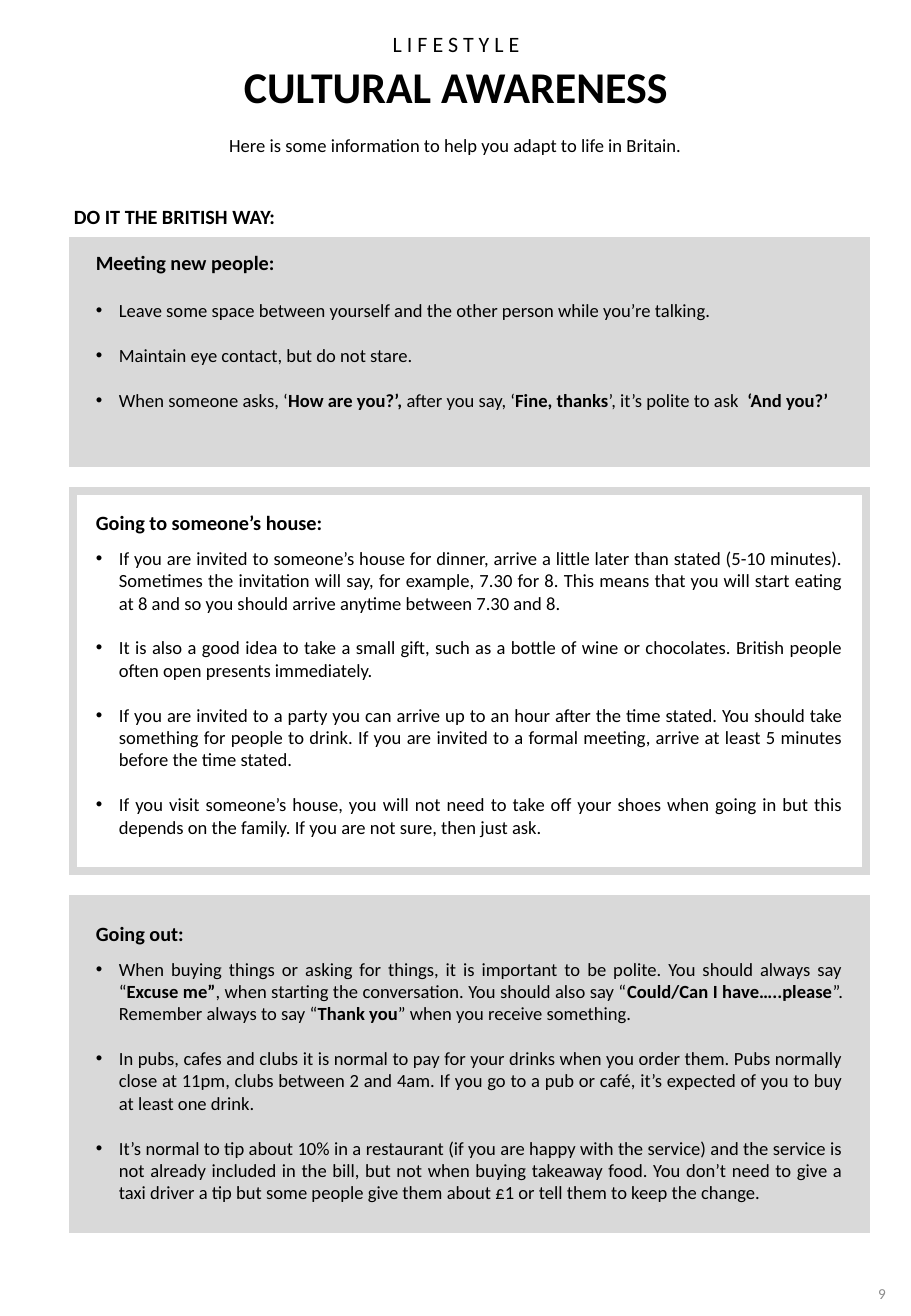
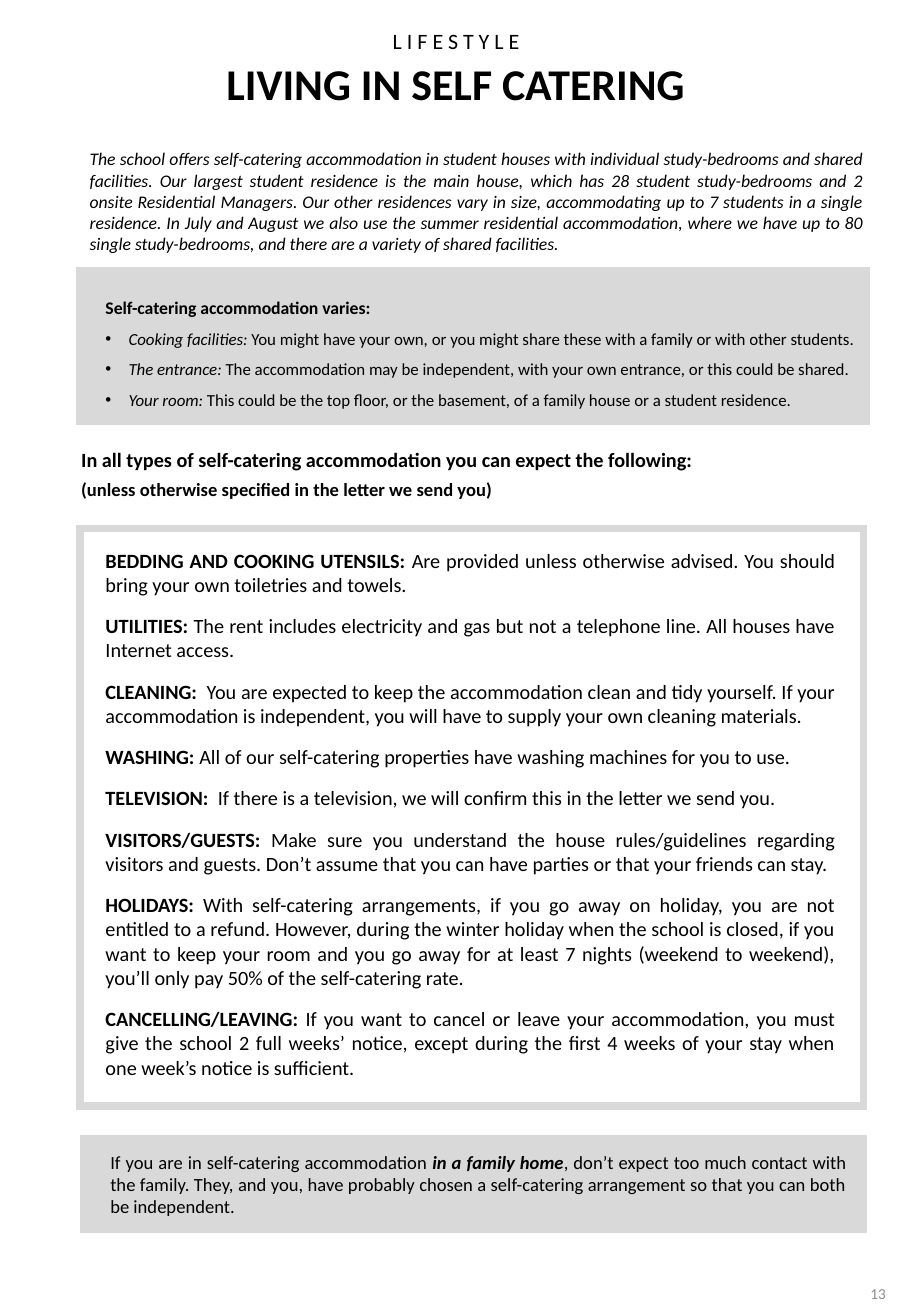
import pptx
import pptx.util
import pptx.dml.color
import pptx.enum.shapes
import pptx.enum.text
import pptx.oxml.ns
import lxml.etree

Inches, Pt = pptx.util.Inches, pptx.util.Pt
qn = pptx.oxml.ns.qn
ALIGN = pptx.enum.text.PP_ALIGN

# Shared style
BLACK = pptx.dml.color.RGBColor(0x00, 0x00, 0x00)
PANEL = pptx.dml.color.RGBColor(0xD9, 0xD9, 0xD9)
PAGE_GREY = pptx.dml.color.RGBColor(0x8C, 0x8C, 0x8C)
FONT = "Calibri"
BULLET_INDENT = Inches(0.19)
BULLET_GAP = 13.4  # one line of 11 pt text

# Each paragraph is a list of (text, style) runs; style holds "b" and/or "i"
MEETING = [
    [("Leave some space between yourself and the other person while you’re talking.", "")],
    [("Maintain eye contact, but do not stare.", "")],
    [("When someone asks, ‘", ""), ("How are you?’, ", "b"), ("after you say, ‘", ""),
     ("Fine, thanks", "b"), ("’, it’s polite to ask  ", ""), ("‘And you?’", "b")],
]
VISITING = [
    [("If you are invited to someone’s house for dinner, arrive a little later than stated "
      "(5-10 minutes). Sometimes the invitation will say, for example, 7.30 for 8. This means "
      "that you will start eating at 8 and so you should arrive anytime between 7.30 and 8.", "")],
    [("It is also a good idea to take a small gift, such as a bottle of wine or chocolates. "
      "British people often open presents immediately.", "")],
    [("If you are invited to a party you can arrive up to an hour after the time stated. You "
      "should take something for people to drink. If you are invited to a formal meeting, "
      "arrive at least 5 minutes before the time stated.", "")],
    [("If you visit someone’s house, you will not need to take off your shoes when going in "
      "but this depends on the family. If you are not sure, then just ask.", "")],
]
GOING_OUT = [
    [("When buying things or asking for things, it is important to be polite. You should "
      "always say “", ""), ("Excuse me”", "b"),
     (", when starting the conversation. You should also say “", ""),
     ("Could/Can I have…..please", "b"), ("”. Remember always to say “", ""),
     ("Thank you", "b"), ("” when you receive something.", "")],
    [("In pubs, cafes and clubs it is normal to pay for your drinks when you order them. Pubs "
      "normally close at 11pm, clubs between 2 and 4am. If you go to a pub or café, it’s "
      "expected of you to buy at least one drink.", "")],
    [("It’s normal to tip about 10% in a restaurant (if you are happy with the service) and "
      "the service is not already included in the bill, but not when buying takeaway food. "
      "You don’t need to give a taxi driver a tip but some people give them about £1 or tell "
      "them to keep the change.", "")],
]
INTRO = (
    "The school offers self-catering accommodation in student houses with individual "
    "study-bedrooms and shared facilities. Our largest student residence is the main house, "
    "which has 28 student study-bedrooms and 2 onsite Residential Managers. Our other "
    "residences vary in size, accommodating up to 7 students in a single residence. In July "
    "and August we also use the summer residential accommodation, where we have up to 80 "
    "single study-bedrooms, and there are a variety of shared facilities.")
VARIATIONS = [
    ("Cooking facilities:",
     " You might have your own, or you might share these with a family or with other students."),
    ("The entrance:",
     " The accommodation may be independent, with your own entrance, or this could be shared."),
    ("Your room:",
     " This could be the top floor, or the basement, of a family house or a student residence."),
]
PROVISIONS = [
    ("BEDDING AND COOKING UTENSILS:",
     " Are provided unless otherwise advised. You should bring your own toiletries and towels."),
    ("UTILITIES:",
     " The rent includes electricity and gas but not a telephone line. All houses have "
     "Internet access."),
    ("CLEANING:",
     "  You are expected to keep the accommodation clean and tidy yourself. If your "
     "accommodation is independent, you will have to supply your own cleaning materials."),
    ("WASHING:",
     " All of our self-catering properties have washing machines for you to use."),
    ("TELEVISION:",
     "  If there is a television, we will confirm this in the letter we send you."),
    ("VISITORS/GUESTS:",
     " Make sure you understand the house rules/guidelines regarding visitors and guests. "
     "Don’t assume that you can have parties or that your friends can stay."),
    ("HOLIDAYS:",
     " With self-catering arrangements, if you go away on holiday, you are not entitled to a "
     "refund. However, during the winter holiday when the school is closed, if you want to "
     "keep your room and you go away for at least 7 nights (weekend to weekend), you’ll only "
     "pay 50% of the self-catering rate."),
    ("CANCELLING/LEAVING:",
     " If you want to cancel or leave your accommodation, you must give the school 2 full "
     "weeks’ notice, except during the first 4 weeks of your stay when one week’s notice is "
     "sufficient."),
]
FAMILY_HOME = [
    ("If you are in self-catering accommodation ", ""), ("in a family home", "bi"),
    (", don’t expect too much contact with the family. They, and you, have probably chosen a "
     "self-catering arrangement so that you can both be independent.", "")]


def add_box(s, left, top, width, height):
    """Add an empty wrapping text box and return its text frame."""
    tf = s.shapes.add_textbox(Inches(left), Inches(top), Inches(width), Inches(height)).text_frame
    tf.word_wrap = True
    return tf


def add_para(tf, runs, size, align=ALIGN.JUSTIFY, after=0, line=1.0, bullet=False,
             color=BLACK, spacing=0):
    """Write one paragraph, using the frame's first one while it is still empty."""
    p = tf.paragraphs[0]
    if p.runs:
        p = tf.add_paragraph()
    p.alignment, p.space_after, p.line_spacing = align, Pt(after), line
    if bullet:
        pPr = p._p.get_or_add_pPr()
        pPr.set("marL", str(BULLET_INDENT))
        pPr.set("indent", str(-BULLET_INDENT))
        lxml.etree.SubElement(pPr, qn("a:buFont")).set("typeface", "Arial")
        lxml.etree.SubElement(pPr, qn("a:buChar")).set("char", "•")
    for text, style in runs:
        r = p.add_run()
        r.text = text
        r.font.name, r.font.size = FONT, Pt(size)
        r.font.bold, r.font.italic = "b" in style, "i" in style
        r.font.color.rgb = color
        if spacing:
            r._r.get_or_add_rPr().set("spc", str(spacing * 100))


def add_line(s, left, top, width, height, text, size, style="", **options):
    """Add a text box that holds a single run."""
    add_para(add_box(s, left, top, width, height), [(text, style)], size, **options)


def add_panel(s, left, top, width, height, filled=True):
    """Add a grey rectangle, or only its grey frame."""
    sp = s.shapes.add_shape(pptx.enum.shapes.MSO_SHAPE.RECTANGLE,
                            Inches(left), Inches(top), Inches(width), Inches(height))
    sp.shadow.inherit = False
    if filled:
        sp.fill.solid()
        sp.fill.fore_color.rgb = PANEL
    else:
        sp.fill.background()
    sp.line.color.rgb = PANEL
    sp.line.width = Pt(4.5)
    ln = sp._element.spPr.find(qn("a:ln"))
    lxml.etree.SubElement(ln, qn("a:miter")).set("lim", "800000")


def add_page(prs, title, number, top):
    """Add a slide with the section name, title and page number."""
    s = prs.slides.add_slide(prs.slide_layouts[6])
    add_line(s, 0.29, top, 6.93, 0.32, "LIFESTYLE", 13, align=ALIGN.CENTER, spacing=3)
    add_line(s, 0.29, top + 0.24, 6.93, 0.54, title, 26, "b", align=ALIGN.CENTER)
    tf = add_box(s, 5.7, 10.35, 1.69, 0.58)
    tf.vertical_anchor = pptx.enum.text.MSO_ANCHOR.MIDDLE
    add_para(tf, [(number, "")], 9, align=ALIGN.RIGHT, color=PAGE_GREY)
    return s


def add_advice(s, top, height, text_top, heading, heading_gap, points, filled=True):
    """Add a panel with a heading and spaced bullet points."""
    add_panel(s, 0.6, top, 6.53, height, filled)
    tf = add_box(s, 0.69, text_top, 6.35, height - 0.25)
    add_para(tf, [(heading, "b")], 12, after=heading_gap)
    for runs in points:
        add_para(tf, runs, 11, after=BULLET_GAP, bullet=True)


def build_culture(prs):
    s = add_page(prs, "CULTURAL AWARENESS", "9", 0.2)
    add_line(s, 1.08, 1.03, 5.34, 0.3,
             "Here is some information to help you adapt to life in Britain.", 11,
             align=ALIGN.CENTER, line=1.15)
    add_line(s, 0.51, 1.63, 2.49, 0.3, "DO IT THE BRITISH WAY:", 12, "b")
    add_advice(s, 1.98, 1.83, 2.01, "Meeting new people:", 14.6, MEETING)
    add_advice(s, 4.04, 3.13, 4.15, "Going to someone’s house:", 7.3, VISITING, filled=False)
    add_advice(s, 7.4, 2.72, 7.53, "Going out:", 7.3, GOING_OUT)


def build_self_catering(prs):
    s = add_page(prs, "LIVING IN SELF CATERING", "13", 0.18)
    add_line(s, 0.64, 1.17, 6.57, 0.98, INTRO, 10.5, "i")

    # Kinds of accommodation
    add_panel(s, 0.66, 2.23, 6.47, 1.24)
    tf = add_box(s, 0.77, 2.31, 6.47, 1.1)
    add_para(tf, [("Self-catering accommodation varies:", "b")], 10.5, ALIGN.LEFT, line=1.5)
    for name, detail in VARIATIONS:
        add_para(tf, [(name, "i"), (detail, "")], 10, ALIGN.LEFT, line=1.5, bullet=True)

    # What to expect
    add_line(s, 0.57, 3.63, 6.5, 0.3,
             "In all types of self-catering accommodation you can expect the following:",
             12, "b", align=ALIGN.LEFT)
    add_line(s, 0.57, 3.88, 4.3, 0.29,
             "(unless otherwise specified in the letter we send you)", 11, "b", align=ALIGN.LEFT)
    add_panel(s, 0.66, 4.35, 6.45, 4.75, filled=False)
    tf = add_box(s, 0.77, 4.46, 6.21, 4.52)
    for name, detail in PROVISIONS:
        add_para(tf, [(name, "b"), (detail, "")], 12, after=10)

    # Family home note
    add_panel(s, 0.69, 9.37, 6.42, 0.75)
    add_para(add_box(s, 0.81, 9.42, 6.26, 0.66), FAMILY_HOME, 11)


def main():
    prs = pptx.Presentation()
    prs.slide_width, prs.slide_height = Inches(7.5), Inches(10.83)
    build_culture(prs)
    build_self_catering(prs)
    prs.save("out.pptx")


if __name__ == "__main__":
    main()
